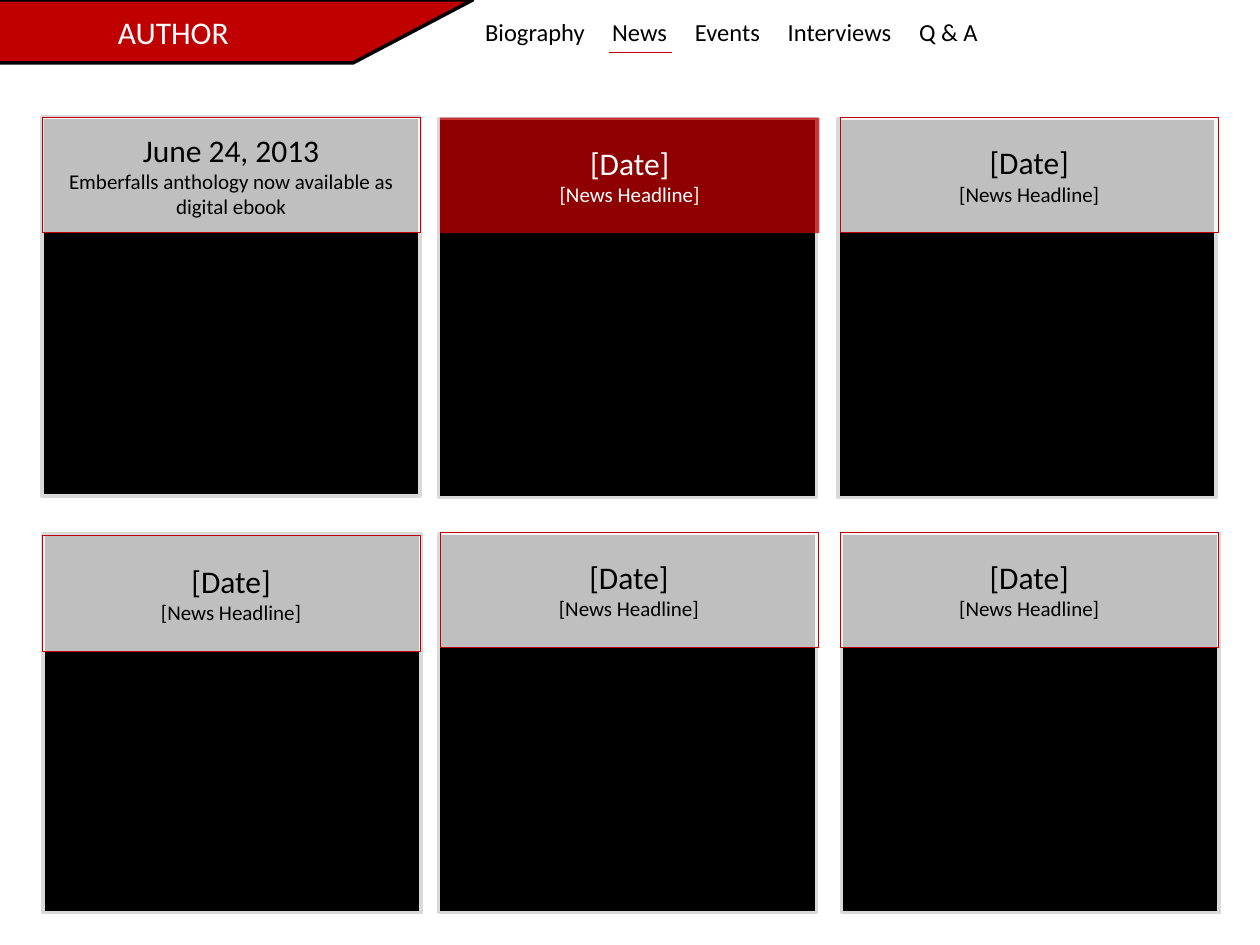
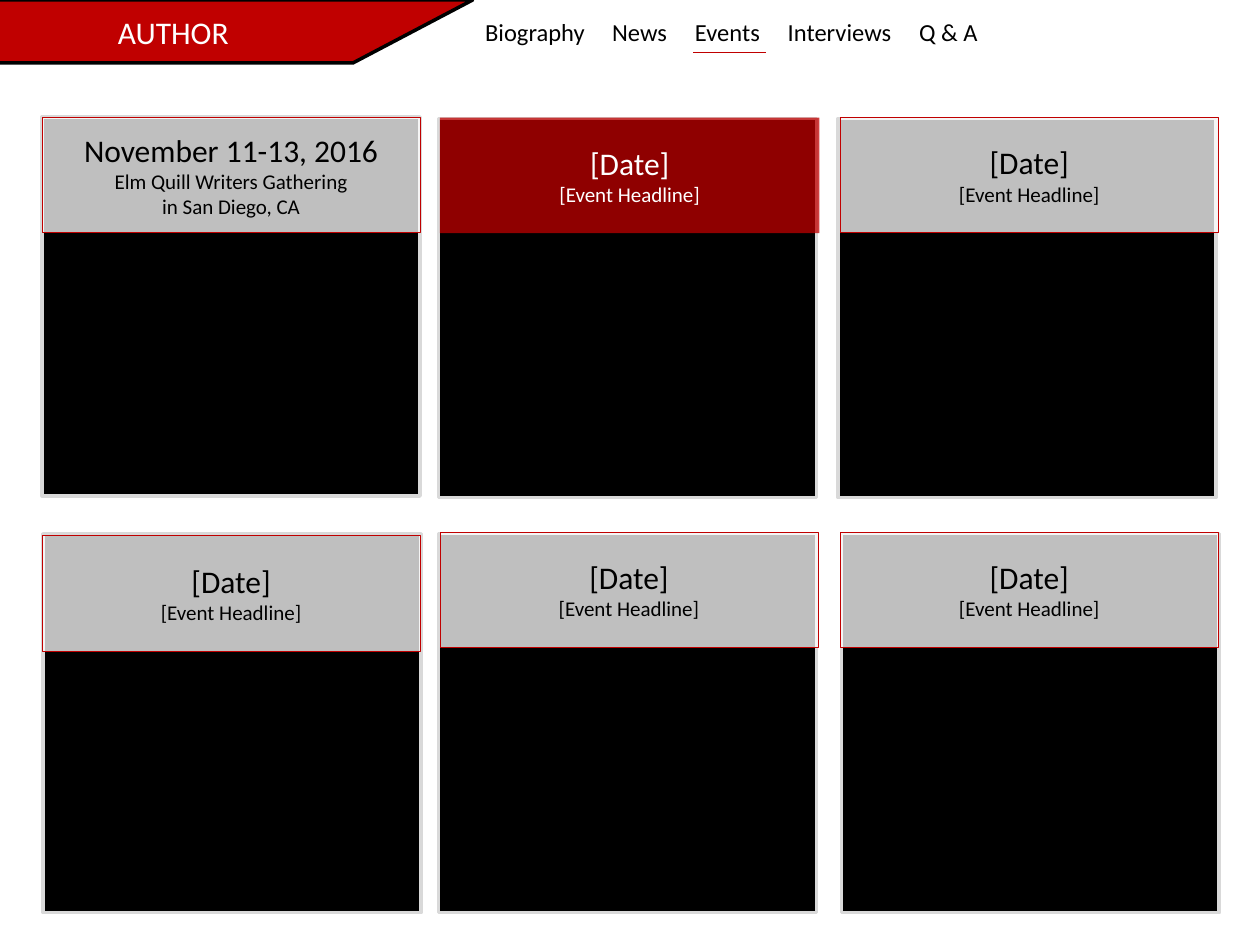
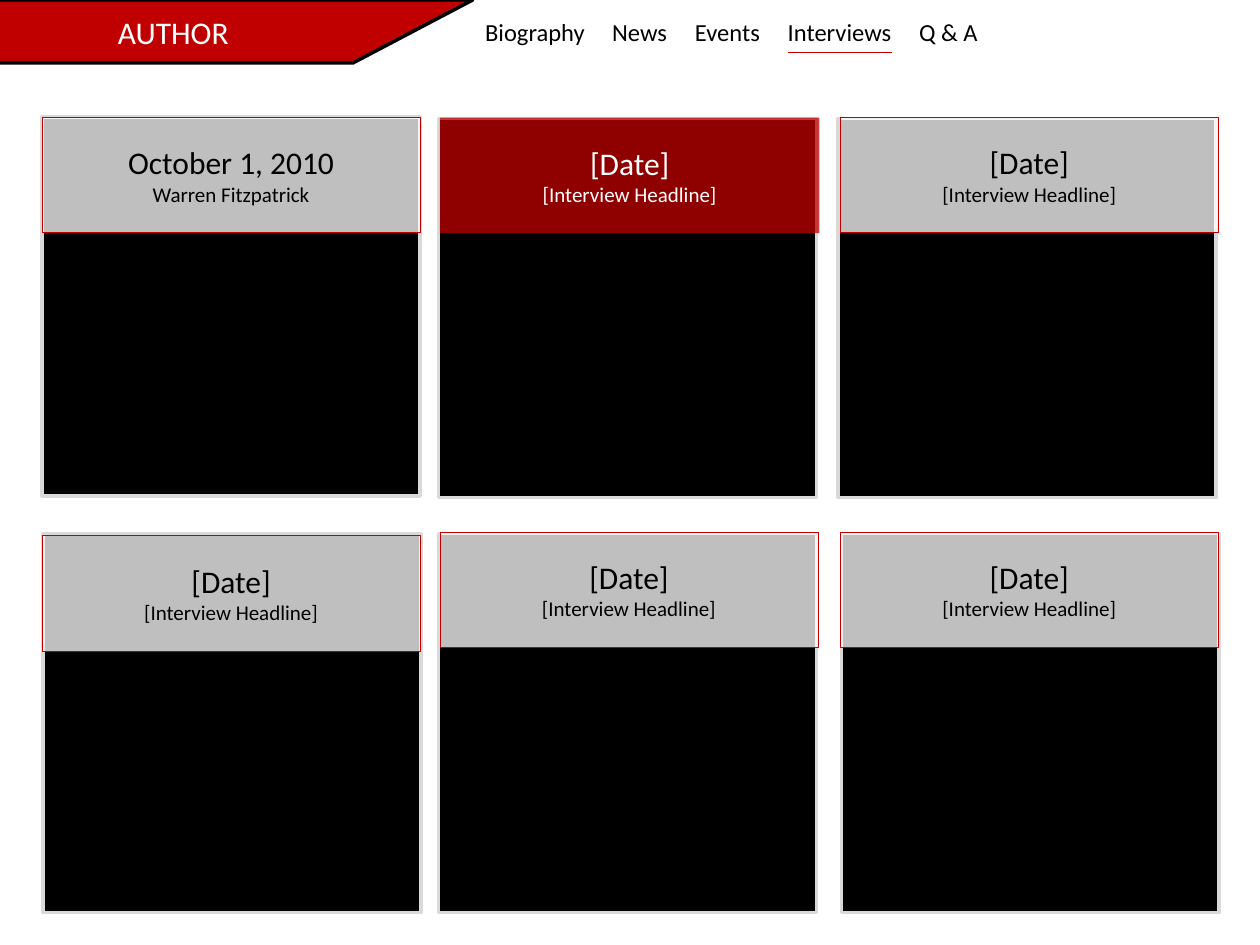
from lxml.etree import SubElement
from pptx import Presentation
from pptx.dml.color import RGBColor
from pptx.enum.shapes import MSO_CONNECTOR as CONNECTOR, MSO_SHAPE as SHAPE
from pptx.enum.text import MSO_ANCHOR as ANCHOR, PP_ALIGN as ALIGN
from pptx.oxml.ns import qn
from pptx.util import Cm, Pt

COLORS = {"red": "C00000", "black": "000000", "white": "FFFFFF", "frame": "D9D9D9"}
FONT = "Calibri"

# Navigation: each entry's tab stop within the bar, in cm
NAV = {"Biography": 0, "News": 2.56, "Events": 4.23, "Interviews": 6.1, "Q & A": 8.75}

# Cards, row by row: left and top of the panel, left and top of its banner, in cm
CARDS = [
    (0.85, 2.36, 0.85, 2.36), (8.84, 2.39, 8.87, 2.37), (16.89, 2.39, 16.94, 2.36),
    (0.87, 10.76, 0.85, 10.8), (8.84, 10.76, 8.87, 10.72), (16.96, 10.76, 16.94, 10.72),
]
HIGHLIGHTED = 1

# Per page: nav entry, ends of its underline in cm, headline placeholder, first card
PAGES = [
    ("News", 12.27, 13.55, "[News Headline]",
     ["June 24, 2013", "Emberfalls anthology now available as digital ebook"]),
    ("Events", 13.97, 15.44, "[Event Headline]",
     ["November 11-13, 2016", "Elm Quill Writers Gathering", "in San Diego, CA"]),
    ("Interviews", 15.88, 17.98, "[Interview Headline]",
     ["October 1, 2010", "Warren Fitzpatrick"]),
]


def add_box(slide, kind, left, top, width, height, fill, line=None, weight=0):
    box = slide.shapes.add_shape(kind, Cm(left), Cm(top), Cm(width), Cm(height))
    box.shadow.inherit = False
    box.fill.solid()
    box.fill.fore_color.rgb = RGBColor.from_string(COLORS[fill])
    if line:
        box.line.color.rgb = RGBColor.from_string(COLORS[line])
        box.line.width = Pt(weight)
    else:
        box.line.fill.background()
    return box


def write(shape, lines, sizes, color, align):
    """Write one paragraph per line; the last size serves all further lines."""
    frame = shape.text_frame
    frame.word_wrap = True
    frame.text = "\n".join(lines)
    for i, paragraph in enumerate(frame.paragraphs):
        paragraph.alignment = align
        font = paragraph.runs[0].font
        font.name = FONT
        font.size = Pt(sizes[min(i, len(sizes) - 1)])
        font.color.rgb = RGBColor.from_string(COLORS[color])


prs = Presentation()
prs.slide_width, prs.slide_height = Cm(25.4), Cm(19.05)

for section, underline_start, underline_end, headline, first_card in PAGES:
    slide = prs.slides.add_slide(prs.slide_layouts[6])

    # Title band, running in from the left edge
    band = add_box(slide, SHAPE.FLOWCHART_DATA, -2.54, 0, 12.07, 1.27, "red", "black", 2)
    band.text_frame.vertical_anchor = ANCHOR.MIDDLE
    write(band, ["AUTHOR"], [18], "white", ALIGN.CENTER)

    # Navigation bar with tab stops
    nav = slide.shapes.add_textbox(Cm(9.53), Cm(0.21), Cm(15.44), Cm(0.86))
    write(nav, ["\t".join(NAV)], [14], "black", ALIGN.LEFT)
    tabs = SubElement(nav.text_frame.paragraphs[0]._p.get_or_add_pPr(), qn("a:tabLst"))
    for stop in list(NAV.values())[1:]:
        SubElement(tabs, qn("a:tab"), pos=str(Cm(stop)), algn="l")

    # Underline of the current section
    underline = slide.shapes.add_connector(
        CONNECTOR.STRAIGHT, Cm(underline_start), Cm(1.06), Cm(underline_end), Cm(1.06))
    underline.line.color.rgb = RGBColor.from_string(COLORS["red"])
    underline.line.width = Pt(0.75)
    SubElement(underline._element.spPr, qn("a:effectLst"))

    # Cards: black panel under a translucent banner
    for i, (panel_left, panel_top, banner_left, banner_top) in enumerate(CARDS):
        add_box(slide, SHAPE.RECTANGLE, panel_left, panel_top, 7.62, 7.64,
                "black", "frame", 2)
        if i == HIGHLIGHTED:
            banner = add_box(slide, SHAPE.RECTANGLE, banner_left, banner_top, 7.65, 2.33, "red")
        else:
            banner = add_box(slide, SHAPE.RECTANGLE, banner_left, banner_top, 7.62, 2.33,
                             "white", "red", 0.25)
        fill_color = banner._element.spPr.find(qn("a:solidFill")).find(qn("a:srgbClr"))
        SubElement(fill_color, qn("a:alpha"), val="75000")
        banner.text_frame.vertical_anchor = ANCHOR.MIDDLE
        write(banner, first_card if i == 0 else ["[Date]", headline], [18, 12],
              "white" if i == HIGHLIGHTED else "black", ALIGN.CENTER)

prs.save("out.pptx")
